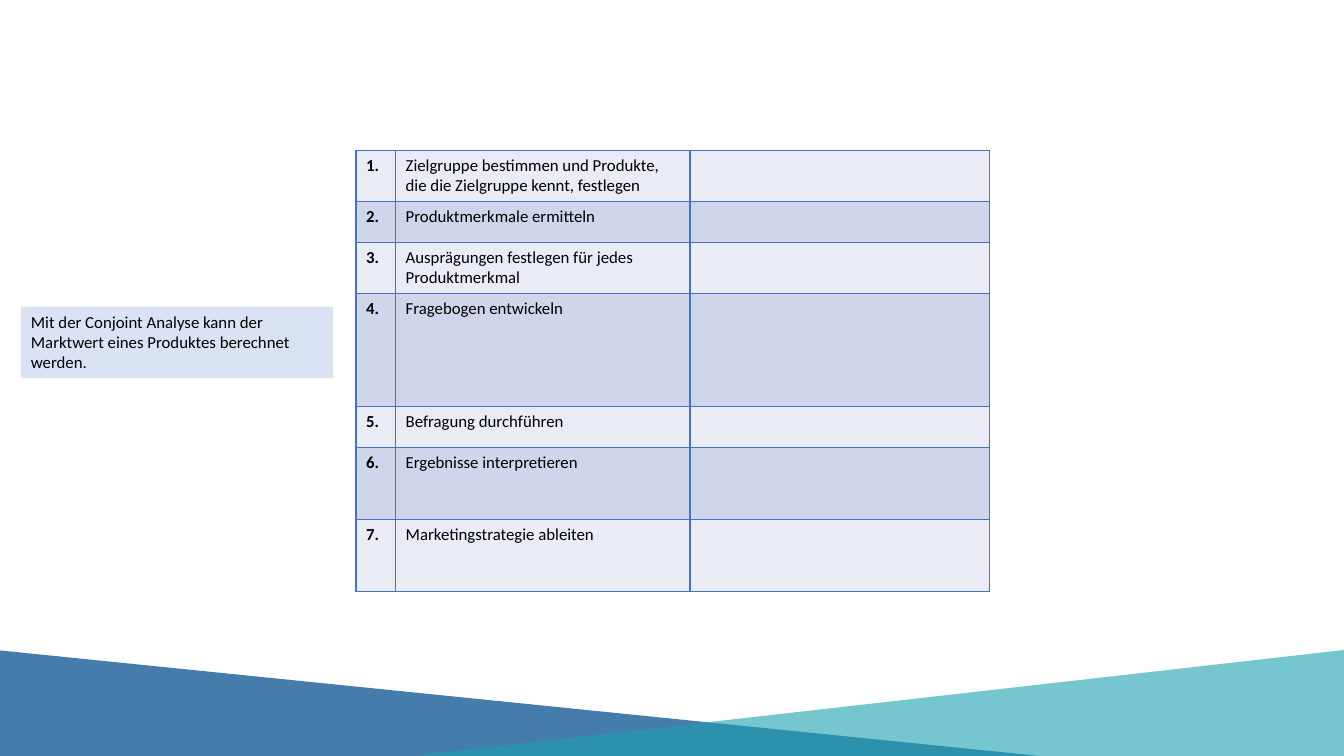
from dataclasses import dataclass

from lxml import etree
from pptx import Presentation
from pptx.dml.color import RGBColor
from pptx.enum.shapes import MSO_SHAPE
from pptx.enum.text import MSO_AUTO_SIZE
from pptx.oxml.ns import qn
from pptx.slide import Slide
from pptx.table import _Cell
from pptx.text.text import TextFrame
from pptx.util import Cm, Pt

TRIANGLE = MSO_SHAPE.ISOSCELES_TRIANGLE
GROW_TO_TEXT = MSO_AUTO_SIZE.SHAPE_TO_FIT_TEXT

BLACK = RGBColor(0x00, 0x00, 0x00)
DEEP_BLUE = RGBColor(0x09, 0x51, 0x91)
TEAL = RGBColor(0x1B, 0xA0, 0xAF)
BORDER_BLUE = RGBColor(0x44, 0x72, 0xC4)
LIGHT_BAND = RGBColor(0xE9, 0xEB, 0xF5)
DARK_BAND = RGBColor(0xCF, 0xD5, 0xEA)
NOTE_BLUE = RGBColor(0xDA, 0xE3, 0xF3)

FONT_NAME = "Calibri"
FONT_SIZE = Pt(12)
BORDER_WIDTH = Pt(1)
COLUMN_WIDTHS = (1.0, 7.42, 7.54)
NOTE = "Mit der Conjoint Analyse kann der Marktwert eines Produktes berechnet werden."


@dataclass(frozen=True)
class Wedge:
    left: float
    width: float
    height: float
    apex: float
    color: RGBColor
    opacity: int


@dataclass(frozen=True)
class Step:
    label: str
    height: float


WEDGES = (
    Wedge(-19.51, 50.14, 3.12, 0.387, DEEP_BLUE, 75),
    Wedge(4.98, 57.78, 3.28, 0.5, TEAL, 60),
)
STEPS = (
    Step("Zielgruppe bestimmen und Produkte, die die Zielgruppe kennt, festlegen", 1.29),
    Step("Produktmerkmale ermitteln", 1.03),
    Step("Ausprägungen festlegen für jedes Produktmerkmal", 1.29),
    Step("Fragebogen entwickeln", 2.85),
    Step("Befragung durchführen", 1.03),
    Step("Ergebnisse interpretieren", 1.81),
    Step("Marketingstrategie ableiten", 1.81),
)


def write_text(frame: TextFrame, text: str, bold: bool = False) -> None:
    frame.text = text
    paragraph = frame.paragraphs[0]
    for font in [paragraph.font] + [span.font for span in paragraph.runs]:
        font.name = FONT_NAME
        font.size = FONT_SIZE
        font.bold = bold
        font.color.rgb = BLACK


def draw_wedge(page: Slide, wedge: Wedge) -> None:
    shape = page.shapes.add_shape(
        TRIANGLE, Cm(wedge.left), Cm(16.38), Cm(wedge.width), Cm(wedge.height)
    )
    shape.adjustments[0] = wedge.apex
    shape.shadow.inherit = False
    shape.line.fill.background()
    shape.fill.solid()
    shape.fill.fore_color.rgb = wedge.color
    color = shape.fill._xPr.find(qn("a:solidFill")).find(qn("a:srgbClr"))
    etree.SubElement(color, qn("a:alpha"), val=str(wedge.opacity * 1000))


def add_borders(cell: _Cell) -> None:
    properties = cell._tc.get_or_add_tcPr()
    for side in ("L", "R", "T", "B"):
        line = etree.SubElement(properties, qn(f"a:ln{side}"), w=str(BORDER_WIDTH))
        fill = etree.SubElement(line, qn("a:solidFill"))
        etree.SubElement(fill, qn("a:srgbClr"), val=str(BORDER_BLUE))


def draw_steps(page: Slide) -> None:
    frame = page.shapes.add_table(
        len(STEPS), len(COLUMN_WIDTHS), Cm(8.97), Cm(3.79),
        Cm(sum(COLUMN_WIDTHS)), Cm(sum(step.height for step in STEPS)),
    )
    table = frame.table
    table.first_row = False
    table.horz_banding = False
    for column, width in zip(table.columns, COLUMN_WIDTHS):
        column.width = Cm(width)
    for index, step in enumerate(STEPS):
        table.rows[index].height = Cm(step.height)
        for position, text in enumerate((f"{index + 1}.", step.label, "")):
            cell = table.cell(index, position)
            add_borders(cell)
            cell.fill.solid()
            cell.fill.fore_color.rgb = DARK_BAND if index % 2 else LIGHT_BAND
            write_text(cell.text_frame, text, bold=position == 0)


def draw_note(page: Slide) -> None:
    box = page.shapes.add_textbox(Cm(0.53), Cm(7.73), Cm(7.86), Cm(1.8))
    box.fill.solid()
    box.fill.fore_color.rgb = NOTE_BLUE
    box.text_frame.word_wrap = True
    box.text_frame.auto_size = GROW_TO_TEXT
    write_text(box.text_frame, NOTE)


def main() -> None:
    deck = Presentation()
    deck.slide_width = Cm(33.87)
    deck.slide_height = Cm(19.05)
    page = deck.slides.add_slide(deck.slide_layouts[6])
    for wedge in WEDGES:
        draw_wedge(page, wedge)
    draw_steps(page)
    draw_note(page)
    deck.save("out.pptx")


if __name__ == "__main__":
    main()
